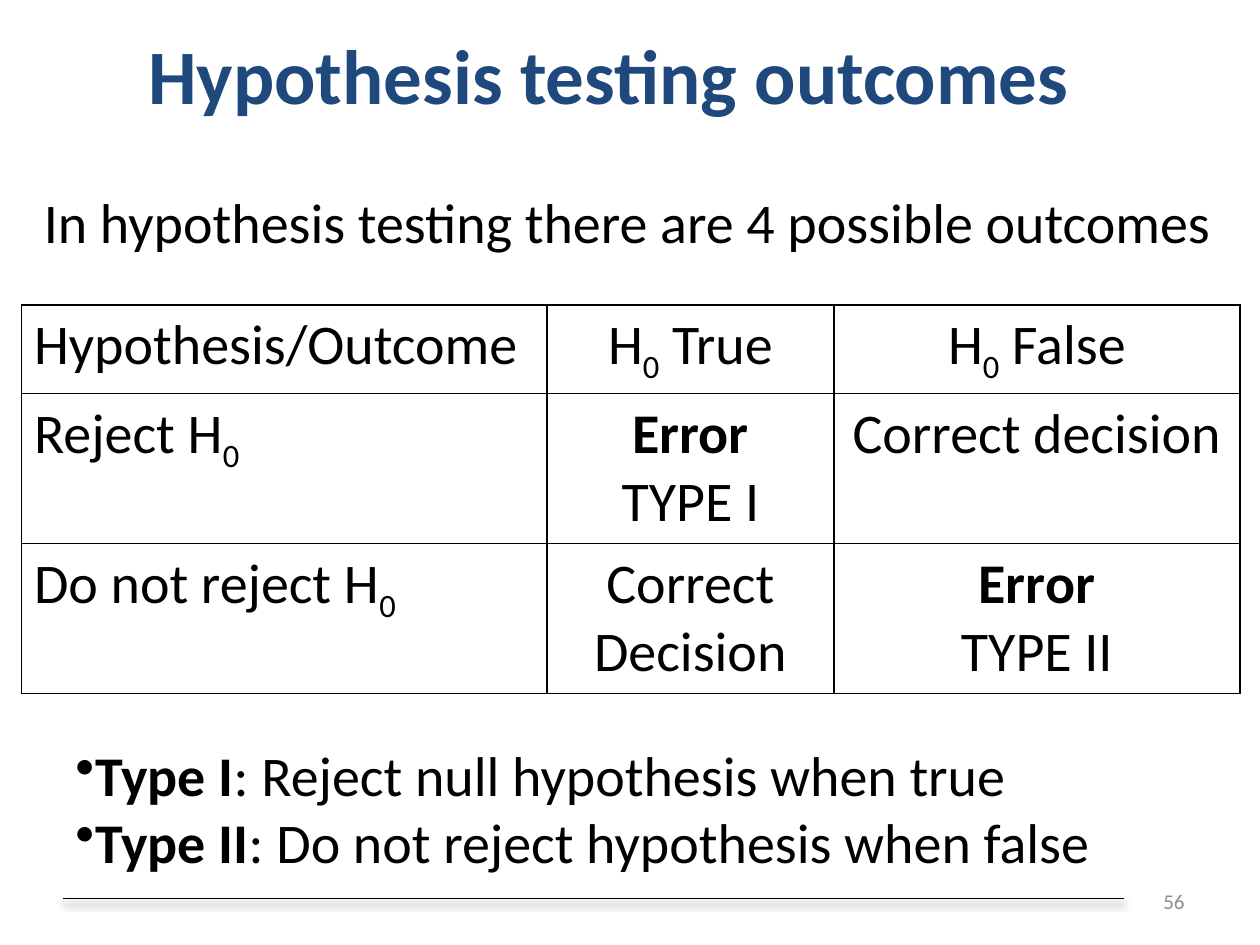
from pptx import Presentation
from pptx.dml.color import RGBColor
from pptx.enum.shapes import MSO_CONNECTOR as Link
from pptx.enum.text import MSO_ANCHOR as Anchor, PP_ALIGN as Align
from pptx.oxml import parse_xml
from pptx.oxml.ns import nsdecls
from pptx.util import Inches, Pt

BOLD, SUB = "bold", "sub"
NULL = ["H", ("0", SUB)]


def paint(code):
    return RGBColor.from_string(code)


def node(tag, attrs="", inner=""):
    return parse_xml(f"<a:{tag} {nsdecls('a')} {attrs}>{inner}</a:{tag}>")


def solid(code, inner=""):
    return f'<a:solidFill><a:srgbClr val="{code}">{inner}</a:srgbClr></a:solidFill>'


def write(frame, paras, size=32, color="000000", bold=False, align=Align.LEFT,
          anchor=Anchor.TOP, bullet=None):
    """Fill a frame; a paragraph is a list of strings or (string, mark) pairs."""
    frame.word_wrap = True
    frame.vertical_anchor = anchor
    for i, runs in enumerate(paras):
        para = frame.paragraphs[0] if i == 0 else frame.add_paragraph()
        para.alignment = align
        if bullet:
            para._p.get_or_add_pPr().append(node("buChar", f'char="{bullet}"'))
        for item in runs:
            text, mark = (item, None) if isinstance(item, str) else item
            run = para.add_run()
            run.text = text
            font = run.font
            font.name, font.size = "Calibri", Pt(size)
            font.bold = bold or mark == BOLD
            font.color.rgb = paint(color)
            if mark == SUB:
                run._r.get_or_add_rPr().set("baseline", "-25000")


class Page:
    ink, navy, grey = "000000", "1F497D", "8C8C8C"

    def __init__(self, deck):
        self.slide = deck.slides.add_slide(deck.slide_layouts[5])
        self.shapes = self.slide.shapes

    def title(self, text, box):
        head = self.shapes.title
        head.left, head.top, head.width, head.height = map(Inches, box)
        write(head.text_frame, [[text]], size=44, color=self.navy, bold=True,
              align=Align.CENTER, anchor=Anchor.MIDDLE)

    def text(self, paras, box, **style):
        area = self.shapes.add_textbox(*map(Inches, box))
        write(area.text_frame, paras, **style)

    def rule(self, left, right, y):
        """Draw a level line with a soft shadow below it."""
        line = self.shapes.add_connector(
            Link.STRAIGHT, Inches(left), Inches(y), Inches(right), Inches(y))
        line.line.color.rgb = paint(self.ink)
        line.line.width = Pt(0.75)
        shade = (f'<a:outerShdw blurRad="{Pt(4)}" dist="{Pt(3)}" dir="5400000" '
                 f'rotWithShape="0"><a:srgbClr val="{self.ink}">'
                 '<a:alpha val="40000"/></a:srgbClr></a:outerShdw>')
        line._element.spPr.append(node("effectLst", inner=shade))

    def border(self, cell):
        props = cell._tc.get_or_add_tcPr()
        for side in "LRTB":
            props.append(node(f"ln{side}", f'w="{Pt(1)}"', solid(self.ink)))

    def table(self, rows, left, top, widths, heights):
        frame = self.shapes.add_table(
            len(rows), len(widths), Inches(left), Inches(top),
            Inches(sum(widths)), Inches(sum(heights)))
        grid = frame.table
        grid.first_row = grid.horz_banding = False
        for col, width in zip(grid.columns, widths):
            col.width = Inches(width)
        for row, height, cells in zip(grid.rows, heights, rows):
            row.height = Inches(height)
            for c, (cell, paras) in enumerate(zip(row.cells, cells)):
                self.border(cell)
                cell.fill.background()
                write(cell.text_frame, paras,
                      align=Align.CENTER if c else Align.LEFT)


def main():
    deck = Presentation()
    deck.slide_width, deck.slide_height = Inches(10), Inches(7.5)
    page = Page(deck)
    page.rule(0.5, 8.92, 7.13)
    page.title("Hypothesis testing outcomes", (0.67, 0.17, 8.33, 0.83))
    rows = [
        [[["Hypothesis/Outcome"]], [[*NULL, " True"]], [[*NULL, " False"]]],
        [[["Reject ", *NULL]], [[("Error", BOLD)], ["TYPE I"]],
         [["Correct decision"]]],
        [[["Do not reject ", *NULL]], [["Correct Decision"]],
         [[("Error", BOLD)], ["TYPE II"]]],
    ]
    page.table(rows, 0.17, 2.42, (4.17, 2.28, 3.22), (0.7, 1.19, 1.19))
    page.text([["56"]], (7.17, 6.95, 2.33, 0.4), size=12, color=page.grey,
              align=Align.RIGHT, anchor=Anchor.MIDDLE)
    page.text([["In hypothesis testing there are 4 possible outcomes"]],
              (0.25, 1.44, 9.5, 0.64))
    page.text([[("Type I", BOLD), ": Reject null hypothesis when true"],
               [("Type II", BOLD), ": Do not reject hypothesis when false"]],
              (0.5, 5.83, 9.17, 1.18), bullet="•")
    deck.save("out.pptx")


if __name__ == "__main__":
    main()
